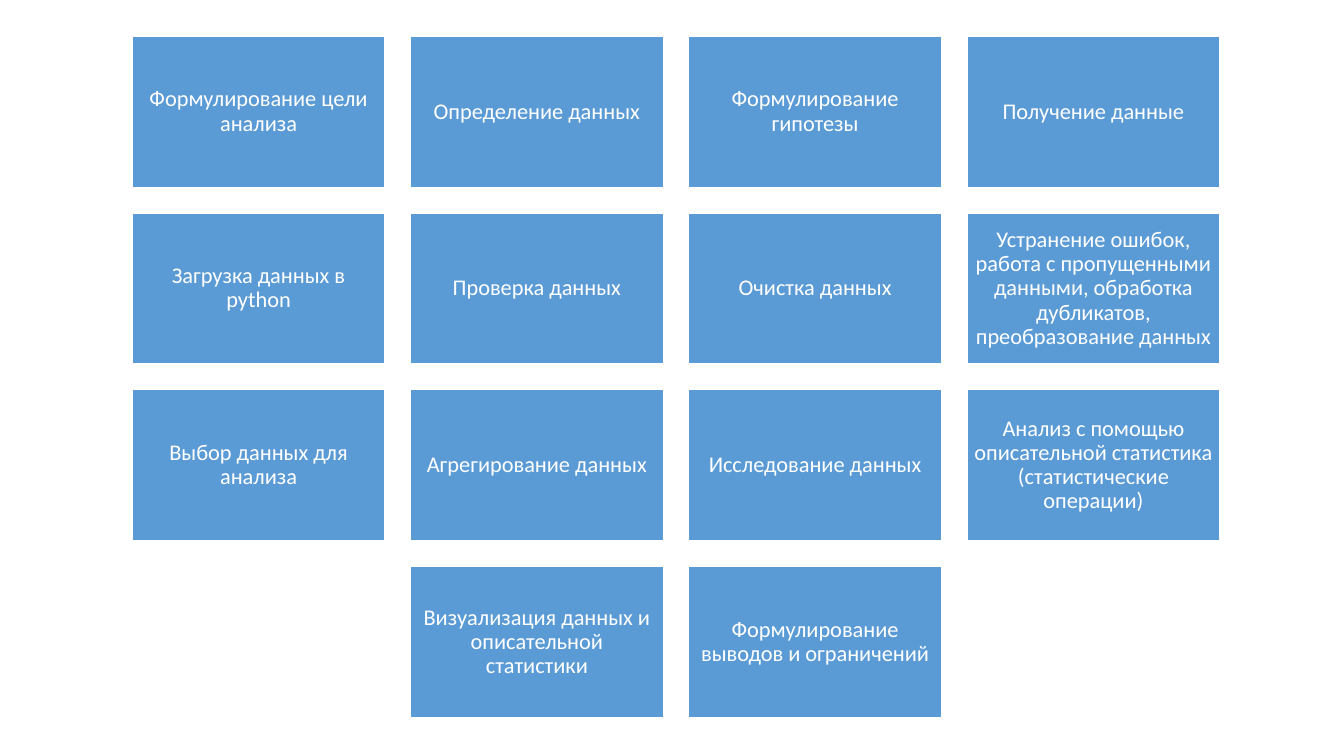
from pptx import Presentation
from pptx import util as u
from pptx.dml import color
from pptx.enum import shapes, text

COLORS = {"card": "5B9BD5", "white": "FFFFFF"}
FONT = "Calibri"
COLS = 4
CARD_W, CARD_H = 2.51, 1.5

STEPS = [
    "Формулирование цели анализа",
    "Определение данных",
    "Формулирование гипотезы",
    "Получение данные",
    "Загрузка данных в python",
    "Проверка данных",
    "Очистка данных",
    "Устранение ошибок, работа с пропущенными данными, "
    "обработка дубликатов, преобразование данных",
    "Выбор данных для анализа",
    "Агрегирование данных",
    "Исследование данных",
    "Анализ с помощью описательной статистика (статистические операции)",
    "Визуализация данных и описательной статистики",
    "Формулирование выводов и ограничений",
]


def rgb(name):
    return color.RGBColor.from_string(COLORS[name])


def add_card(slide, left, top, label):
    """Draw one step as a filled rectangle with centred text."""
    card = slide.shapes.add_shape(
        shapes.MSO_SHAPE.RECTANGLE, u.Inches(left), u.Inches(top),
        u.Inches(CARD_W), u.Inches(CARD_H))
    card.shadow.inherit = False
    card.fill.solid()
    card.fill.fore_color.rgb = rgb("card")
    card.line.color.rgb = rgb("white")
    card.line.width = u.Pt(1)

    # Text
    frame = card.text_frame
    frame.word_wrap = True
    frame.vertical_anchor = text.MSO_ANCHOR.MIDDLE
    frame.margin_left = frame.margin_right = u.Inches(0.07)
    frame.margin_top = frame.margin_bottom = u.Inches(0.07)
    para = frame.paragraphs[0]
    para.alignment = text.PP_ALIGN.CENTER
    para.line_spacing = 0.9
    run = para.add_run()
    run.text = label
    run.font.name = FONT
    run.font.size = u.Pt(16)
    run.font.color.rgb = rgb("white")


def add_grid(slide, left, top, width, height, steps):
    """Spread the steps over the box, centring a short last row."""
    rows = [steps[i:i + COLS] for i in range(0, len(steps), COLS)]
    step_x = (width - CARD_W) / (COLS - 1)
    step_y = (height - CARD_H) / (len(rows) - 1)
    for r, row in enumerate(rows):
        indent = (COLS - len(row)) / 2
        for c, label in enumerate(row):
            add_card(slide, left + (c + indent) * step_x,
                     top + r * step_y, label)


def main():
    deck = Presentation()
    deck.slide_width = u.Inches(13.33)
    deck.slide_height = u.Inches(7.5)
    slide = deck.slides.add_slide(deck.slide_layouts[6])

    # Steps of the data analysis
    add_grid(slide, 1.31, 0.36, 10.79, 6.76, STEPS)
    deck.save("out.pptx")


if __name__ == "__main__":
    main()
